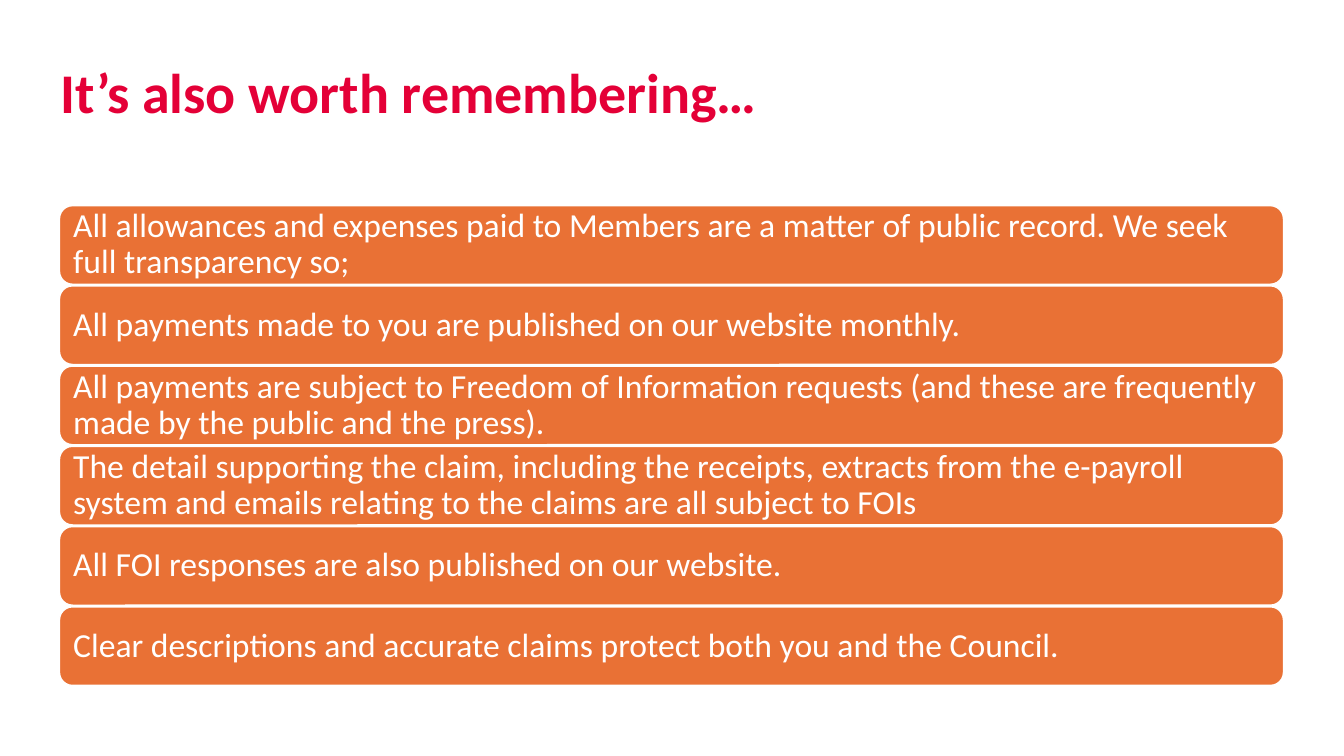
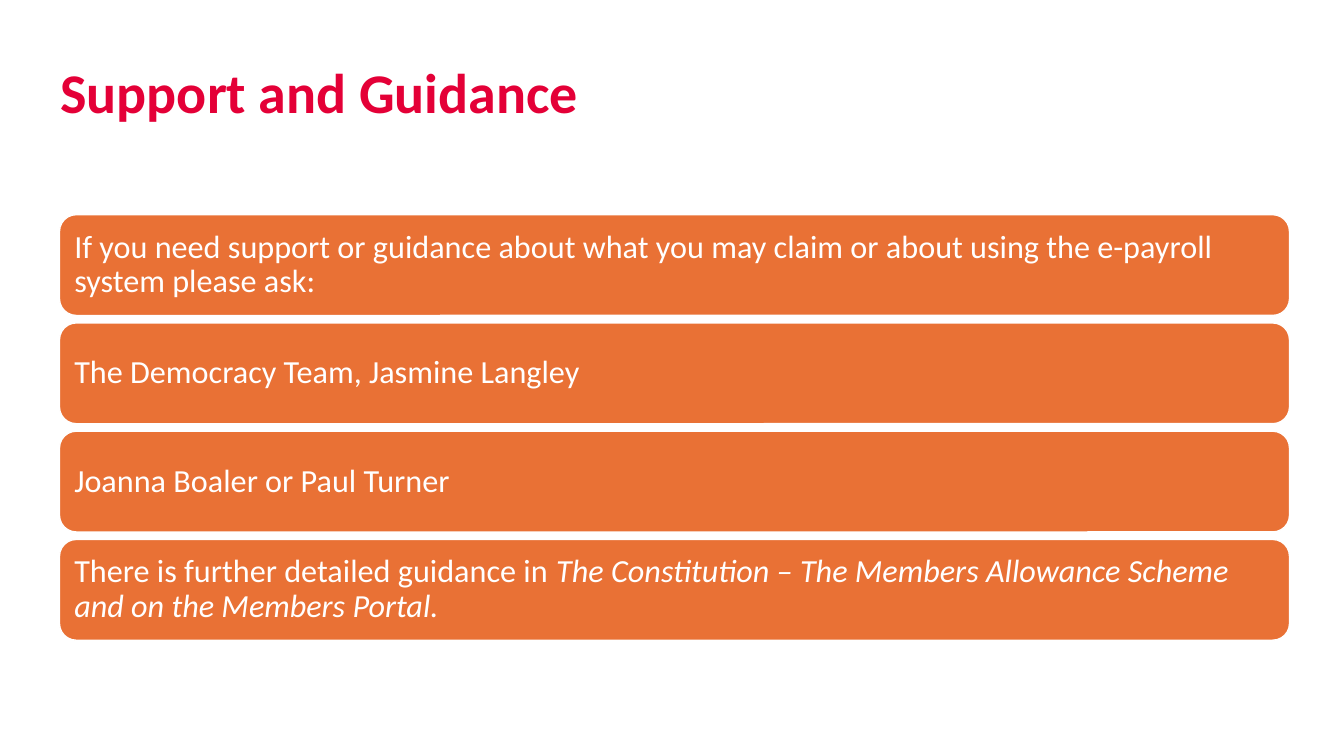
import pptx
import pptx.util
import pptx.dml.color
import pptx.enum.shapes
import pptx.enum.text

Inches, Pt = pptx.util.Inches, pptx.util.Pt

# Shared style
FONT = "Calibri"
COLOURS = {"title": "E40037", "bar": "E97135", "white": "FFFFFF"}
TITLE_AREA = (0.6, 0.57, 8.1, 1.16)
BAR_LEFT = 0.59
BAR_INSET = 0.1

# Content: each bar is a list of (text, italic) spans
SLIDES = [
    {
        "title": "It’s also worth remembering…",
        "top": 2.04, "width": 12.14, "height": 0.78, "pitch": 0.796, "size": 24,
        "bars": [
            [("All allowances and expenses paid to Members are a matter of public record. "
              "We seek full transparency so;", False)],
            [("All payments made to you are published on our website monthly.", False)],
            [("All payments are subject to Freedom of Information requests "
              "(and these are frequently made by the public and the press).", False)],
            [("The detail supporting the claim, including the receipts, extracts from the "
              "e-payroll system and emails relating to the claims are all subject to FOIs", False)],
            [("All FOI responses are also published on our website.", False)],
            [("Clear descriptions and accurate claims protect both you and the Council.", False)],
        ],
    },
    {
        "title": "Support and Guidance",
        "top": 2.13, "width": 12.2, "height": 1, "pitch": 1.074, "size": 23,
        "bars": [
            [("If you need support or guidance about what you may claim or about using "
              "the e-payroll system please ask:", False)],
            [("The Democracy Team, Jasmine Langley", False)],
            [("Joanna Boaler or Paul Turner", False)],
            [("There is further detailed guidance in ", False),
             ("The Constitution – The Members Allowance Scheme and on the Members Portal.", True)],
        ],
    },
]


def colour(name):
    return pptx.dml.color.RGBColor.from_string(COLOURS[name])


def set_frame(frame, inset, anchor):
    frame.word_wrap = True
    frame.vertical_anchor = anchor
    frame.margin_left = frame.margin_right = Inches(inset)
    frame.margin_top = frame.margin_bottom = Inches(inset)


def set_font(para, size, colour_name, bold=False):
    para.alignment = pptx.enum.text.PP_ALIGN.LEFT
    para.font.name = FONT
    para.font.size = Pt(size)
    para.font.bold = bold
    para.font.color.rgb = colour(colour_name)


def add_title(page, text):
    box = page.shapes.add_textbox(*map(Inches, TITLE_AREA))
    set_frame(box.text_frame, 0, pptx.enum.text.MSO_ANCHOR.TOP)
    para = box.text_frame.paragraphs[0]
    para.text = text
    set_font(para, 40, "title", bold=True)


def add_bar(page, area, spans, size):
    bar = page.shapes.add_shape(
        pptx.enum.shapes.MSO_SHAPE.ROUNDED_RECTANGLE, *map(Inches, area))
    bar.shadow.inherit = False
    bar.fill.solid()
    bar.fill.fore_color.rgb = colour("bar")
    bar.line.color.rgb = colour("white")
    bar.line.width = Pt(1)
    set_frame(bar.text_frame, BAR_INSET, pptx.enum.text.MSO_ANCHOR.MIDDLE)
    para = bar.text_frame.paragraphs[0]
    para.line_spacing = 0.9
    for text, italic in spans:
        span = para.add_run()
        span.text = text
        if italic:
            span.font.italic = True
    set_font(para, size, "white")


def main():
    deck = pptx.Presentation()
    deck.slide_width, deck.slide_height = Inches(13.33), Inches(7.5)
    for content in SLIDES:
        page = deck.slides.add_slide(deck.slide_layouts[6])
        add_title(page, content["title"])
        for row, spans in enumerate(content["bars"]):
            top = content["top"] + row * content["pitch"]
            area = (BAR_LEFT, top, content["width"], content["height"])
            add_bar(page, area, spans, content["size"])
    deck.save("out.pptx")


if __name__ == "__main__":
    main()
